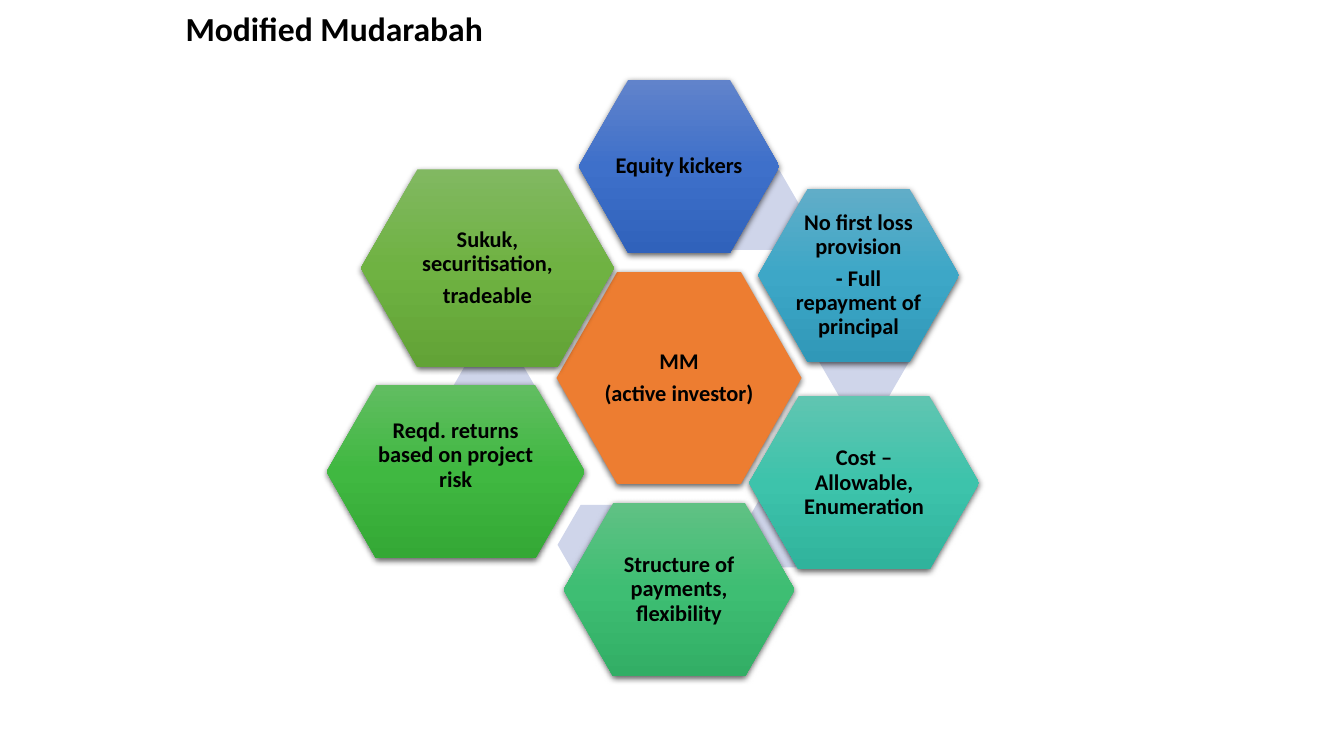
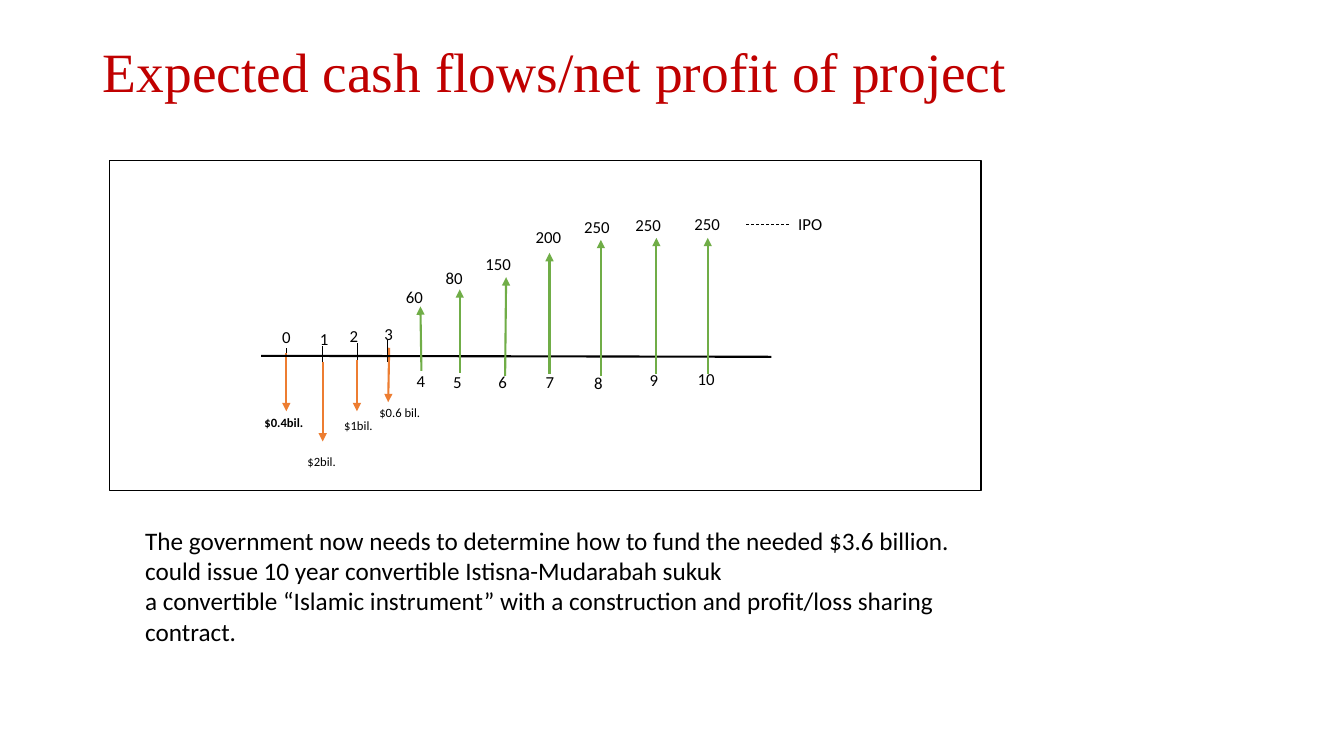
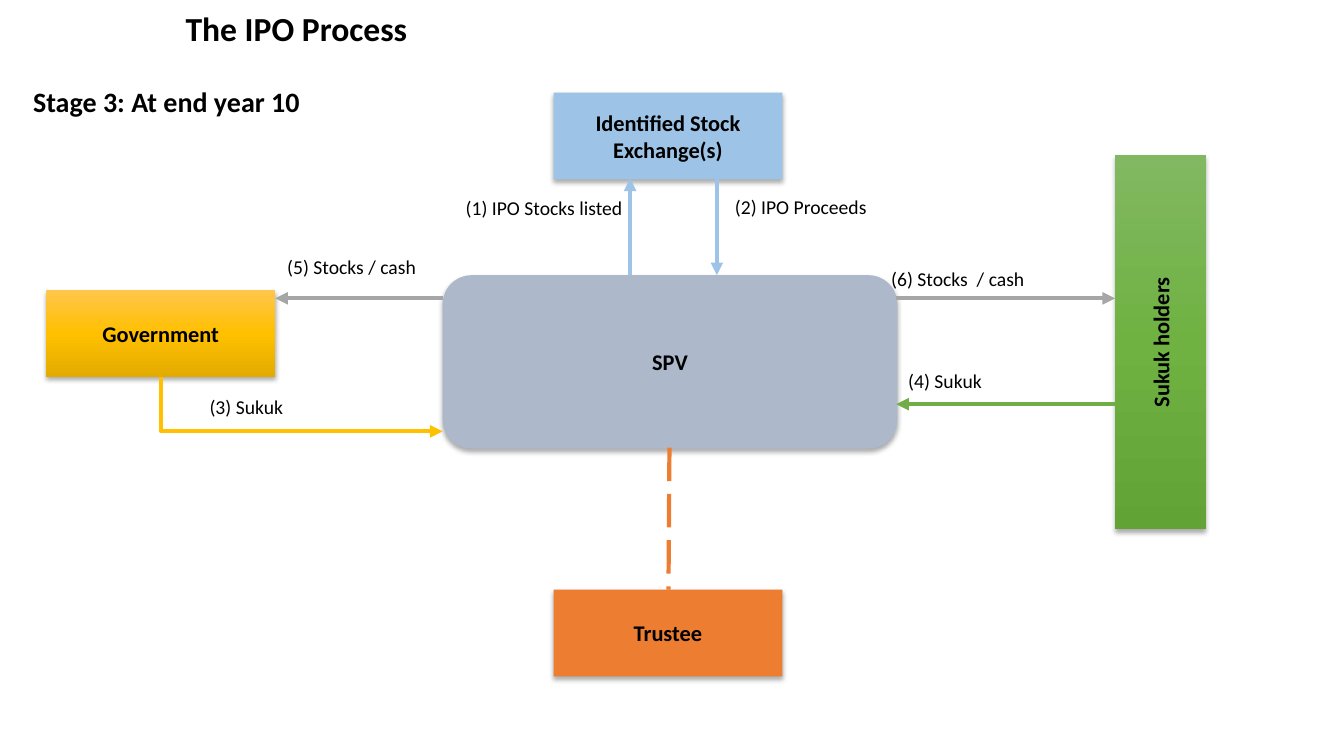
from copy import deepcopy

from lxml import etree
from pptx import Presentation
from pptx.dml.color import RGBColor
from pptx.enum.dml import MSO_LINE
from pptx.enum.shapes import MSO_CONNECTOR, MSO_SHAPE
from pptx.enum.text import MSO_ANCHOR, MSO_AUTO_SIZE, PP_ALIGN
from pptx.oxml.ns import qn
from pptx.util import Inches, Pt

LEFT, CENTER = PP_ALIGN.LEFT, PP_ALIGN.CENTER
TOP, MIDDLE = MSO_ANCHOR.TOP, MSO_ANCHOR.MIDDLE
RECTANGLE, ROUNDED = MSO_SHAPE.RECTANGLE, MSO_SHAPE.ROUNDED_RECTANGLE
HEXAGON, OVAL = MSO_SHAPE.HEXAGON, MSO_SHAPE.OVAL
STRAIGHT, ELBOW = MSO_CONNECTOR.STRAIGHT, MSO_CONNECTOR.ELBOW
DASH, LONG_DASH = MSO_LINE.DASH, MSO_LINE.LONG_DASH

TITLE_AND_BODY, TITLE_ONLY = 1, 5
BODY_FONT, SERIF_FONT = "Calibri", "Times New Roman"
DEFAULT_INSETS = (0.1, 0.05, 0.1, 0.05)
NO_INSETS = (0, 0, 0, 0)

COLORS = {
    "black": "000000",
    "red": "C00000",
    "orange": "ED7D31",
    "green": "70AD47",
    "gold": "FFC000",
    "gray": "A6A6A6",
    "slate": "ADB9CA",
    "sky": "9DC3E6",
    "lavender": "CFD5EA",
}
# Top, middle and bottom colour of each vertical gradient.
GRADIENTS = {
    "blue": ("6183CB", "3E70CA", "3062BB"),
    "cyan": ("61ADC8", "3DA7C7", "3098B8"),
    "teal": ("60C5B1", "3DC3AB", "30B39C"),
    "mint": ("60C184", "3EBE73", "32AE65"),
    "leaf": ("61BD61", "40B841", "34A835"),
    "moss": ("81B861", "6FB242", "62A336"),
    "amber": ("FFC64B", "FFC000", "E3AB00"),
}
# Opacity in percent, blur and distance in points.
HEXAGON_SHADOW = (63, 4.5, 1.5)
BOX_SHADOW = (32, 3.5, 2.2)


def rgb(name):
    return RGBColor.from_string(COLORS[name])


def write(frame, lines, size=16, bold=False, color="black", font=BODY_FONT, align=LEFT,
          anchor=TOP, insets=DEFAULT_INSETS, line_spacing=1.0, space_after=0):
    """Fill a text frame with one paragraph per line of text."""
    frame.word_wrap = True
    frame.auto_size = MSO_AUTO_SIZE.NONE
    frame.vertical_anchor = anchor
    frame.margin_left, frame.margin_top, frame.margin_right, frame.margin_bottom = map(
        Inches, insets)
    for index, line in enumerate(lines.split("\n")):
        paragraph = frame.add_paragraph() if index else frame.paragraphs[0]
        paragraph.alignment = align
        paragraph.line_spacing = line_spacing
        paragraph.space_before = Pt(0)
        paragraph.space_after = Pt(space_after)
        run = paragraph.add_run()
        run.text = line
        run.font.name = font
        run.font.size = Pt(size)
        run.font.bold = bold
        run.font.color.rgb = rgb(color)


def place(shape, left, top, width, height):
    shape.left, shape.top = Inches(left), Inches(top)
    shape.width, shape.height = Inches(width), Inches(height)


class Deck:
    def __init__(self):
        self.presentation = Presentation()
        self.presentation.slide_width = Inches(13.33)
        self.presentation.slide_height = Inches(7.5)
        self.slide = None

    def add_slide(self, layout=TITLE_ONLY):
        self.slide = self.presentation.slides.add_slide(
            self.presentation.slide_layouts[layout])

    def title(self, text, box=(1.84, 0.12, 9.94, 0.48), **style):
        title = self.slide.shapes.title
        place(title, *box)
        style = {"size": 24, "bold": True, "insets": NO_INSETS, **style}
        write(title.text_frame, text, line_spacing=0.9, **style)

    def body(self, text, box, **style):
        """Fill the body placeholder with paragraphs without bullets."""
        body = self.slide.placeholders[1]
        place(body, *box)
        write(body.text_frame, text, **style)
        for paragraph in body.text_frame.paragraphs:
            properties = paragraph._p.get_or_add_pPr()
            properties.set("marL", "0")
            properties.set("indent", "0")
            etree.SubElement(properties, qn("a:buNone"))

    def text(self, text, box, **style):
        shape = self.slide.shapes.add_textbox(*map(Inches, box))
        write(shape.text_frame, text, **style)

    def number(self, text, box):
        """Write a number of the timeline in a plain oval."""
        shape = self.shape(OVAL, box)
        write(shape.text_frame, text, size=12, align=CENTER, anchor=MIDDLE)

    def shape(self, kind, box, fill=None, line=None, shadow=None):
        shape = self.slide.shapes.add_shape(kind, *map(Inches, box))
        if fill in GRADIENTS:
            self.fill_gradient(shape, GRADIENTS[fill])
        elif fill:
            shape.fill.solid()
            shape.fill.fore_color.rgb = rgb(fill)
        else:
            shape.fill.background()
        if line:
            shape.line.color.rgb = rgb(line)
            shape.line.width = Pt(0.75)
        else:
            shape.line.fill.background()
        shape.shadow.inherit = False
        if shadow:
            self.cast_shadow(shape, *shadow)
        return shape

    def fill_gradient(self, shape, colors):
        shape.fill.gradient()
        shape.fill.gradient_angle = 270
        stop_list = shape._element.spPr.find(".//" + qn("a:gsLst"))
        stop_list.append(deepcopy(stop_list[-1]))
        for index, (stop, color) in enumerate(zip(shape.fill.gradient_stops, colors)):
            stop.position = index / 2
            stop.color.rgb = RGBColor.from_string(color)

    def cast_shadow(self, shape, opacity, blur, distance):
        effects = shape._element.spPr.find(qn("a:effectLst"))
        shadow = etree.SubElement(
            effects, qn("a:outerShdw"), blurRad=str(Pt(blur)), dist=str(Pt(distance)),
            dir="5400000", algn="ctr", rotWithShape="0")
        color = etree.SubElement(shadow, qn("a:srgbClr"), val=COLORS["black"])
        etree.SubElement(color, qn("a:alpha"), val=str(opacity * 1000))

    def hexagon(self, text, box, fill, bottom_inset=0.02):
        shape = self.shape(HEXAGON, box, fill, shadow=HEXAGON_SHADOW)
        shape.adjustments[0] = 0.286
        write(shape.text_frame, text, bold=True, align=CENTER, anchor=MIDDLE,
              insets=(0.02, 0.02, 0.02, bottom_inset), line_spacing=0.9, space_after=5.6)

    def hexagon_link(self, left, top):
        """Draw the pale hexagon that shows between two neighbours."""
        shape = self.shape(HEXAGON, (left, top, 0.92, 0.79), "lavender")
        shape.adjustments[0] = 0.289

    def party(self, text, box, fill, kind=RECTANGLE, vertical=False):
        shape = self.shape(kind, box, fill, shadow=BOX_SHADOW)
        write(shape.text_frame, text, bold=True, align=CENTER, anchor=MIDDLE)
        if vertical:
            shape.text_frame._txBody.bodyPr.set("vert", "vert270")

    def line(self, start, end, color="black", width=3.0, kind=STRAIGHT, dash=None,
             head=False, tail=False):
        """Draw a line; head and tail put arrowheads at its start and end."""
        connector = self.slide.shapes.add_connector(kind, *map(Inches, (*start, *end)))
        connector.line.color.rgb = rgb(color)
        connector.line.width = Pt(width)
        if dash:
            connector.line.dash_style = dash
        properties = connector._element.spPr
        if kind == ELBOW:
            properties.find(qn("a:prstGeom")).set("prst", "bentConnector2")
        outline = properties.find(qn("a:ln"))
        for tag, wanted in (("a:headEnd", head), ("a:tailEnd", tail)):
            if wanted:
                etree.SubElement(outline, qn(tag), type="triangle")
        etree.SubElement(properties, qn("a:effectLst"))


def build_modified_mudarabah(deck):
    deck.add_slide()
    deck.title("Modified Mudarabah")
    deck.hexagon("MM\n(active investor)", (5.52, 2.7, 2.43, 2.1), "orange")
    ring = [
        ("Equity kickers", (5.74, 0.79, 1.99, 1.72), "blue", (7.04, 1.69)),
        ("No first loss provision\n- Full repayment of principal",
         (7.52, 1.87, 1.99, 1.72), "cyan", (8.11, 3.17)),
        ("Cost – Allowable, Enumeration", (7.43, 3.93, 2.28, 1.72), "teal", (7.37, 4.84)),
        ("Structure of payments, flexibility", (5.59, 4.99, 2.29, 1.72), "mint",
         (5.53, 5.01)),
        ("Reqd. returns based on project risk", (3.24, 3.82, 2.56, 1.72), "leaf",
         (4.44, 3.53)),
        ("Sukuk, securitisation,\ntradeable", (3.58, 1.68, 2.51, 1.96), "moss", None),
    ]
    for text, box, fill, link in ring:
        if link:
            deck.hexagon_link(*link)
        deck.hexagon(text, box, fill, bottom_inset=0.34 if fill == "leaf" else 0.02)


def build_cash_flows(deck):
    deck.add_slide(TITLE_AND_BODY)
    deck.title("Expected cash flows/net profit of project", (0.92, 0.4, 11.5, 0.68),
               size=39.6, bold=False, color="red", font=SERIF_FONT, anchor=MIDDLE,
               insets=DEFAULT_INSETS)
    deck.shape(RECTANGLE, (1.09, 1.59, 8.64, 3.28), line="black")

    # Year and its box, tick x and top, start and tip of the arrow, cost and its box.
    outflows = [
        ("0", (2.49, 3.09, 0.7, 0.51), (2.84, 3.45), (2.84, 3.5), (2.84, 4.08),
         "$0.4bil.", (2.39, 3.9, 0.85, 0.58)),
        ("1", (2.92, 3.1, 0.59, 0.53), (3.2, 3.43), (3.2, 3.59), (3.2, 4.38),
         "$2bil.", (2.84, 4.29, 0.7, 0.58)),
        ("2", (3.25, 3.05, 0.52, 0.56), (3.54, 3.4), (3.54, 3.57), (3.54, 4.08),
         "$1bil.", (3.18, 3.93, 0.75, 0.58)),
        ("3", (3.56, 3.06, 0.59, 0.5), (3.84, 3.37), (3.86, 3.45), (3.85, 3.99),
         "$0.6 bil.", (3.38, 3.8, 1.17, 0.58)),
    ]
    for year, year_box, (tick_x, tick_top), start, tip, cost, cost_box in outflows:
        deck.line((tick_x, tick_top + 0.22), (tick_x, tick_top), width=0.5)
        deck.line(start, tip, "orange", 1.5, tail=True)
        deck.number(year, year_box)
        deck.text(cost, cost_box, size=9, bold=year == "0", align=CENTER, anchor=MIDDLE)

    deck.line((7.4, 2.23), (7.84, 2.23), width=0.5, dash=DASH)
    deck.text("IPO", (7.79, 2.04, 0.49, 0.35), size=12, align=CENTER, anchor=MIDDLE,
              insets=NO_INSETS)
    deck.line((2.59, 3.53), (7.65, 3.54), width=1.5)

    # Year and its box, foot and tip of the arrow, income and its box.
    inflows = [
        ("4", (3.88, 3.51, 0.59, 0.54), (4.18, 3.68), (4.17, 3.04),
         "60", (3.81, 2.65, 0.6, 0.58)),
        ("5", (4.24, 3.5, 0.59, 0.57), (4.56, 3.7), (4.56, 2.87),
         "80", (4.14, 2.48, 0.73, 0.55)),
        ("6", (4.69, 3.55, 0.59, 0.48), (5.01, 3.73), (5.02, 2.75),
         "150", (4.48, 2.33, 0.92, 0.57)),
        ("7", (5.16, 3.54, 0.59, 0.5), (5.45, 3.71), (5.45, 2.51),
         "200", (4.99, 2.09, 0.9, 0.52)),
        ("8", (5.64, 3.51, 0.59, 0.57), (5.96, 3.73), (5.96, 2.38),
         "250", (5.45, 2.05, 0.94, 0.41)),
        ("9", (6.19, 3.49, 0.59, 0.55), (6.51, 3.71), (6.51, 2.36),
         "250", (5.98, 2.01, 0.9, 0.44)),
        ("10", (6.64, 3.47, 0.73, 0.58), (7.02, 3.71), (7.02, 2.36),
         "250", (6.58, 2.01, 0.87, 0.42)),
    ]
    for year, year_box, foot, tip, income, income_box in inflows:
        deck.line(foot, tip, "green", 1.5, tail=True)
        deck.number(year, year_box)
        deck.number(income, income_box)

    deck.body("The government now needs to determine how to fund the needed $3.6 billion.\n"
              "could issue 10 year convertible Istisna-Mudarabah sukuk\n"
              "a convertible “Islamic instrument” with a construction and profit/loss "
              "sharing contract.", (1.34, 5.16, 8.57, 1.31), size=18)


def build_ipo_process(deck):
    deck.add_slide()
    deck.title("The IPO Process")
    deck.text("Stage 3: At end year 10", (0.23, 0.79, 4.53, 0.44), size=20, bold=True)

    deck.party("Sukuk holders", (11.06, 1.54, 0.9, 3.71), "moss", vertical=True)
    deck.party("Government", (0.46, 2.88, 2.27, 0.86), "amber")
    deck.party("SPV", (4.39, 2.73, 4.51, 1.72), "slate", ROUNDED)
    deck.party("Trustee", (5.49, 5.85, 2.27, 0.86), "orange")
    deck.party("Identified Stock Exchange(s)", (5.49, 0.92, 2.27, 0.86), "sky")

    deck.line((8.89, 2.96), (11.06, 2.96), "gray", tail=True)
    deck.line((6.64, 4.44), (6.63, 5.85), "orange", dash=LONG_DASH)
    deck.line((4.39, 4.28), (1.6, 3.74), "gold", kind=ELBOW, head=True)
    deck.line((2.73, 2.96), (4.39, 2.96), "gray", head=True)
    deck.line((7.11, 1.77), (7.11, 2.73), "sky", tail=True)
    deck.line((6.25, 2.73), (6.25, 1.77), "sky", tail=True)
    deck.line((8.89, 4.01), (11.06, 4.01), "green", head=True)

    steps = [
        ("(1) IPO Stocks listed", 4.52, 1.89, 1.87),
        ("(2) IPO Proceeds", 7.19, 1.88, 2.69),
        ("(3) Sukuk", 1.98, 3.87, 2.87),
        ("(4) Sukuk", 8.91, 3.61, 2.87),
        ("(5) Stocks / cash", 2.75, 2.48, 2.07),
        ("(6) Stocks  / cash", 8.74, 2.6, 2.87),
    ]
    for text, left, top, width in steps:
        deck.text(text, (left, top, width, 0.34), size=14)


def main():
    deck = Deck()
    build_modified_mudarabah(deck)
    build_cash_flows(deck)
    build_ipo_process(deck)
    deck.presentation.save("out.pptx")


if __name__ == "__main__":
    main()
